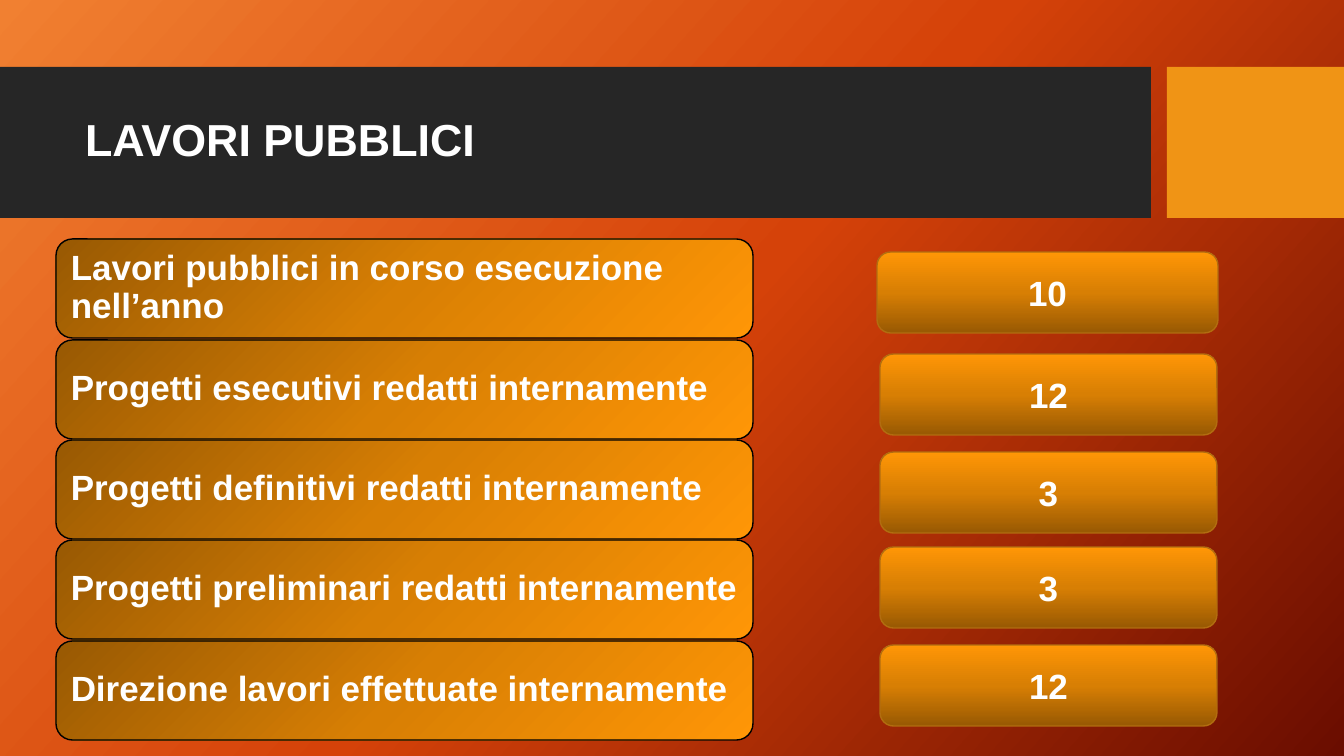
from lxml.etree import SubElement
from pptx import Presentation
from pptx.dml.color import RGBColor
from pptx.enum.shapes import MSO_SHAPE as Shape
from pptx.enum.text import MSO_ANCHOR as Anchor, PP_ALIGN as Align
from pptx.oxml.ns import qn
from pptx.util import Emu, Pt

PX = 914400 / 100.8
COLORS = {
    "white": "FFFFFF",
    "band": "262626",
    "accent": "F09415",
    "label line": "000000",
    "value line": "B26D10",
}
BACKGROUND_STOPS = ("F18031", "D54209", "6A0D00")
ORANGE_STOPS = ("985903", "D87F04", "FF9606")

LABELS = [
    "Lavori pubblici in corso esecuzione nell’anno",
    "Progetti esecutivi redatti internamente",
    "Progetti definitivi redatti internamente",
    "Progetti preliminari redatti internamente",
    "Direzione lavori effettuate internamente",
]
LABEL_TOP, LABEL_PITCH = 239, 100.5
# value, left, top, width
VALUES = [
    ("10", 877, 252, 341),
    ("12", 880, 354, 337),
    ("3", 880, 452, 337),
    ("3", 880, 547, 337),
    ("12", 880, 645, 337),
]


def px(length):
    return Emu(round(length * PX))


def color(name):
    return RGBColor.from_string(COLORS[name])


def set_gradient(fill, owner, stops, angle=None):
    """Evenly spaced stops, linear at an angle or circular from the top left."""
    fill.gradient()
    gradient = next(owner.iter(qn("a:gradFill")))
    for child in list(gradient):
        gradient.remove(child)
    stop_list = SubElement(gradient, qn("a:gsLst"))
    for index, value in enumerate(stops):
        position = 100000 * index // (len(stops) - 1)
        stop = SubElement(stop_list, qn("a:gs"), pos=str(position))
        SubElement(stop, qn("a:srgbClr"), val=value)
    if angle is None:
        circle = SubElement(gradient, qn("a:path"), {"path": "circle"})
        SubElement(circle, qn("a:fillToRect"), r="100000", b="100000")
    else:
        SubElement(gradient, qn("a:lin"), ang=str(angle * 60000), scaled="0")


def set_text(shape, text, size=25, align=Align.LEFT, spacing=None, insets=(10, 5, 10, 5)):
    frame = shape.text_frame
    frame.word_wrap = True
    frame.vertical_anchor = Anchor.MIDDLE
    (frame.margin_left, frame.margin_top,
     frame.margin_right, frame.margin_bottom) = map(px, insets)
    paragraph = frame.paragraphs[0]
    paragraph.alignment = align
    paragraph.line_spacing = spacing
    run = paragraph.add_run()
    run.text = text
    run.font.name = "Arial"
    run.font.size = Pt(size)
    run.font.bold = True
    run.font.color.rgb = color("white")


def add_box(slide, kind, left, top, width, height):
    shape = slide.shapes.add_shape(kind, px(left), px(top), px(width), px(height))
    shape.shadow.inherit = False
    return shape


def add_bar(slide, left, width, fill):
    bar = add_box(slide, Shape.RECTANGLE, left, 67, width, 151)
    bar.fill.solid()
    bar.fill.fore_color.rgb = color(fill)
    bar.line.fill.background()


def add_card(slide, left, top, width, height, line, angle=None):
    card = add_box(slide, Shape.ROUNDED_RECTANGLE, left, top, width, height)
    set_gradient(card.fill, card.element, ORANGE_STOPS, angle)
    card.line.color.rgb = color(line)
    card.line.width = Pt(1)
    return card


def place_title(slide, text):
    title = slide.shapes.title
    title.left, title.top, title.width, title.height = map(px, (75, 83, 1059, 119))
    set_text(title, text, size=32, spacing=0.9)
    # Bring the title in front of the bars
    title.element.getparent().append(title.element)


def main():
    presentation = Presentation()
    presentation.slide_width, presentation.slide_height = px(1344), px(756)
    slide = presentation.slides.add_slide(presentation.slide_layouts[5])
    set_gradient(slide.background.fill, slide.element, BACKGROUND_STOPS, angle=42)

    # Header
    add_bar(slide, 0, 1151, "band")
    add_bar(slide, 1167, 177, "accent")
    place_title(slide, "LAVORI PUBBLICI")

    # Activities
    for row, label in enumerate(LABELS):
        top = round(LABEL_TOP + row * LABEL_PITCH)
        card = add_card(slide, 56, top, 697, 99, "label line")
        set_text(card, label, spacing=0.9, insets=(10, 10, 8, 10))

    # Counts
    for value, left, top, width in VALUES:
        card = add_card(slide, left, top, width, 81, "value line", angle=270)
        set_text(card, value, align=Align.CENTER)

    presentation.save("out.pptx")


if __name__ == "__main__":
    main()
